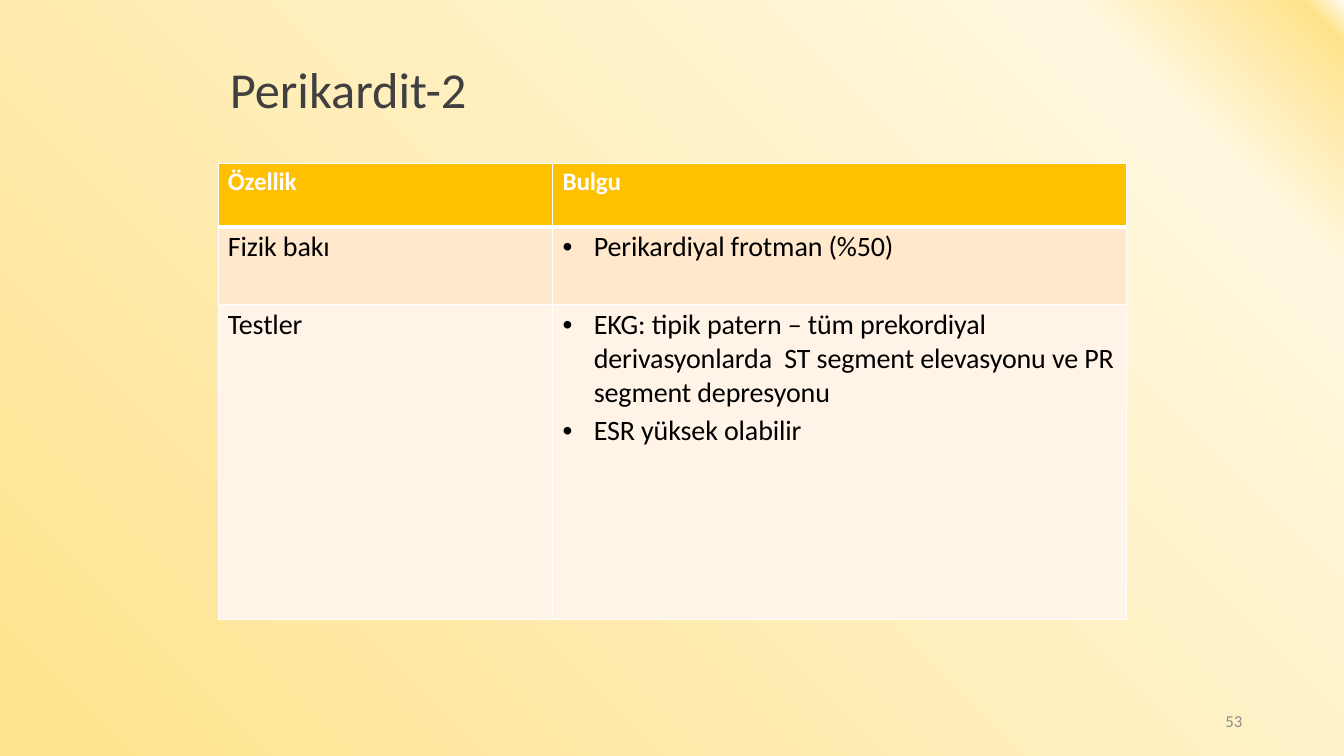
from lxml.etree import SubElement
from pptx import Presentation
from pptx.dml.color import RGBColor
from pptx.enum.text import MSO_ANCHOR, PP_ALIGN
from pptx.oxml.ns import qn
from pptx.util import Inches, Pt

HUES = {
    "head": "FFC000", "band": "FFE8CC", "pale": "FFF4E7",
    "white": "FFFFFF", "black": "000000", "title": "404040", "gray": "8C8C8C",
    "glow": "FFFCF2", "gold": "FFE38C", "cream": "FFF7DF",
}


def style(para, text, size, hue, bold=False, **form):
    run = para.add_run()
    run.text = text
    for name, value in {"name": "Calibri", "size": Pt(size), "bold": bold}.items():
        setattr(run.font, name, value)
    run.font.color.rgb = RGBColor.from_string(HUES[hue])
    for name, value in form.items():
        setattr(para, name, value)
    return run


def paint(parent, hue):
    fill = SubElement(parent, qn("a:solidFill"))
    SubElement(fill, qn("a:srgbClr"), val=HUES[hue])


deck = Presentation()
deck.slide_width, deck.slide_height = Inches(13.33), Inches(7.5)
slide = deck.slides.add_slide(deck.slide_layouts[5])

back = slide.background.fill
back.gradient()
back.gradient_angle = 225
stops = slide.background._cSld.find(".//" + qn("a:gsLst"))
for stop in list(stops):
    stops.remove(stop)
for place, hue in [(0, "glow"), (2, "gold"), (13, "cream"), (100, "gold")]:
    stop = SubElement(stops, qn("a:gs"), pos=str(place * 1000))
    SubElement(stop, qn("a:srgbClr"), val=HUES[hue])

title = slide.shapes.title
spot = {"left": 2.18, "top": 0.29, "width": 8.9, "height": 1.25}
for name, value in spot.items():
    setattr(title, name, Inches(value))
title.text_frame.vertical_anchor = MSO_ANCHOR.MIDDLE
style(title.text_frame.paragraphs[0], "Perikardit-2", 36, "title",
      alignment=PP_ALIGN.LEFT, line_spacing=0.9)

rows = [
    (0.63, "head", 2.5, "Özellik", ["Bulgu"]),
    (0.77, "band", 2, "Fizik bakı", ["Perikardiyal frotman (%50)"]),
    (3.13, "pale", 2.4, "Testler", [
        "EKG: tipik patern – tüm prekordiyal derivasyonlarda  ST segment "
        "elevasyonu ve PR segment depresyonu",
        "ESR yüksek olabilir"]),
]
table = slide.shapes.add_table(
    len(rows), 2, Inches(2.17), Inches(1.62), Inches(9), Inches(4.53)).table
for col, width in zip(table.columns, [3.31, 5.69]):
    col.width = Inches(width)

inset = {"margin_left": 0, "margin_top": Inches(0.03),
         "margin_right": 0, "margin_bottom": 0}
for r, (height, hue, space, label, items) in enumerate(rows):
    table.rows[r].height = Inches(height)
    head = r == 0
    for c, lines in enumerate([[label], items]):
        cell = table.cell(r, c)
        for name, value in inset.items():
            setattr(cell, name, value)
        props = cell._tc.get_or_add_tcPr()
        for side in "LRTB":
            thick = (head and side == "B") or (r == 1 and side == "T")
            edge = SubElement(props, qn("a:ln" + side),
                              w=str(Pt(3 if thick else 1)))
            paint(edge, "white")
        cell.fill.solid()
        cell.fill.fore_color.rgb = RGBColor.from_string(HUES[hue])
        frame = cell.text_frame
        for i, line in enumerate(lines):
            para = frame.add_paragraph() if i else frame.paragraphs[0]
            run = style(para, line, 18 if head else 20,
                        "white" if head else "black", head,
                        space_before=Pt(space))
            run._r.get_or_add_rPr().set("spc", "-10")
            form = para._p.get_or_add_pPr()
            dot = c == 1 and not head
            left, hang = (0.41, -0.31) if dot else (0.09 + c / 100, 0)
            form.set("marL", str(Inches(left)))
            form.set("indent", str(Inches(hang)))
            if dot:
                SubElement(form, qn("a:buFont"), typeface="Arial")
                SubElement(form, qn("a:buChar"), char="•")

page = slide.shapes.add_textbox(
    Inches(9.42), Inches(6.95), Inches(3), Inches(0.4)).text_frame
page.word_wrap = True
page.vertical_anchor = MSO_ANCHOR.MIDDLE
style(page.paragraphs[0], "53", 12, "gray", alignment=PP_ALIGN.RIGHT)

deck.save("out.pptx")
